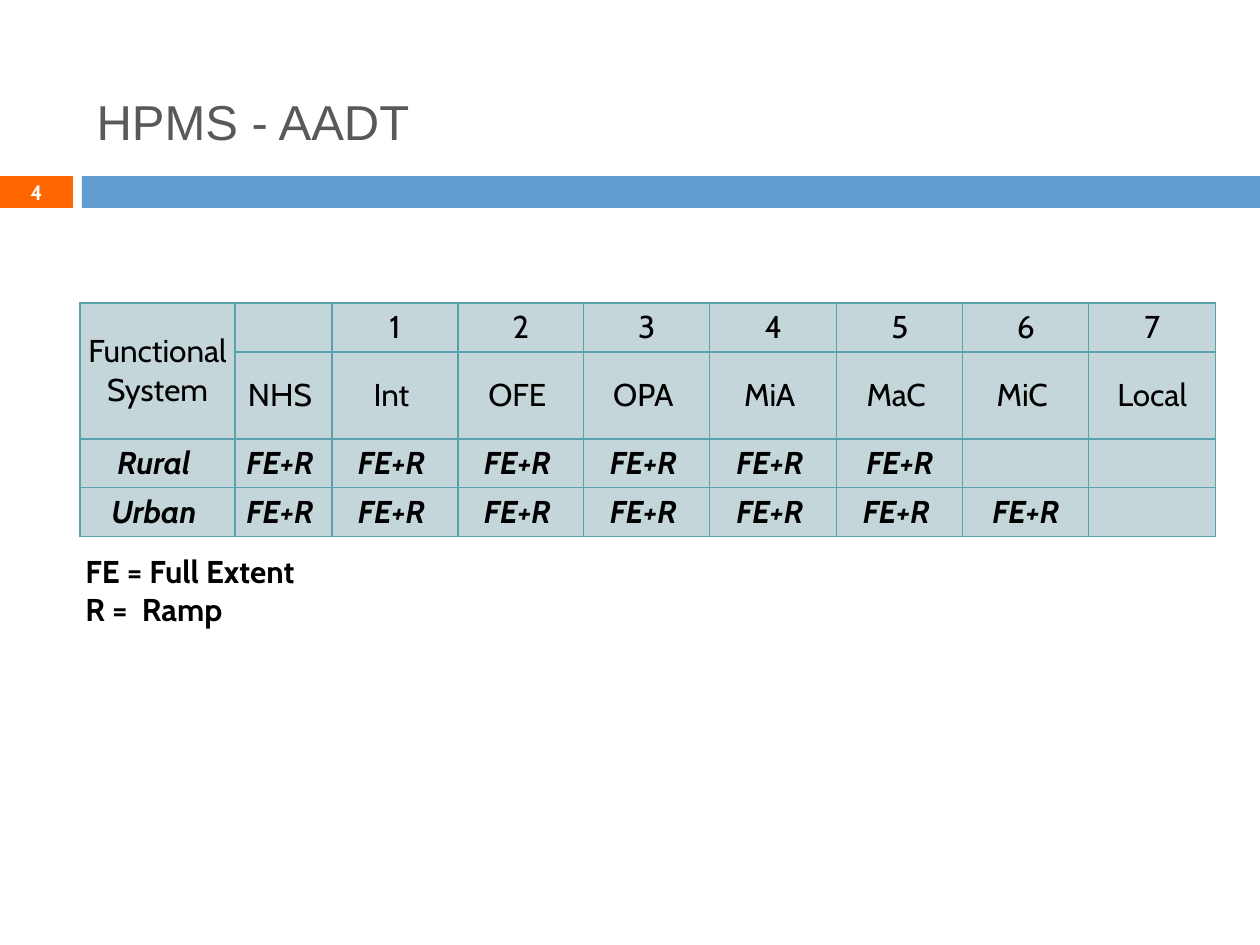
from dataclasses import dataclass

from lxml.etree import SubElement
from pptx import Presentation
from pptx.dml.color import RGBColor
from pptx.enum.shapes import MSO_SHAPE as Preset
from pptx.enum.text import MSO_ANCHOR as Anchor, PP_ALIGN as Align
from pptx.oxml.ns import qn
from pptx.util import Emu, Pt

SCALE = 914400 // 126
BORDER_SIDES = ("a:lnL", "a:lnR", "a:lnT", "a:lnB")
COLUMN_WIDTHS = [155, 97] + [126] * 3 + [127] + [126] * 2 + [127]
ROW_HEIGHTS = [49, 87, 49, 49]
FULL = "FE+R "
ROWS = [
    ["Functional System", "", *"1234567"],
    ["", "NHS ", "Int ", "OFE ", "OPA ", "MiA ", "MaC ", "MiC ", "Local"],
    ["Rural ", *[FULL] * 5, "FE+R", "", ""],
    ["Urban ", *[FULL] * 6, "FE+R", ""],
]


@dataclass
class Box:
    left: int
    top: int
    width: int
    height: int

    def emu(self) -> tuple:
        return px(self.left), px(self.top), px(self.width), px(self.height)


@dataclass
class Style:
    size: float = 18
    color: str = "000000"
    font: str = "Cabin"
    bold: bool = False
    italic: bool = False


def px(length: int) -> Emu:
    return Emu(length * SCALE)


def rgb(color: str) -> RGBColor:
    return RGBColor.from_string(color)


def add_run(paragraph, text: str, style: Style, align=Align.LEFT) -> None:
    paragraph.alignment = align
    run = paragraph.add_run()
    run.text = text
    run.font.name = style.font
    run.font.size = Pt(style.size)
    run.font.bold = style.bold
    run.font.italic = style.italic
    run.font.color.rgb = rgb(style.color)


def add_bar(slide, box: Box, color: str):
    shape = slide.shapes.add_shape(Preset.RECTANGLE, *box.emu())
    shape.shadow.inherit = False
    shape.fill.solid()
    shape.fill.fore_color.rgb = rgb(color)
    shape.line.fill.background()
    return shape


def add_text(slide, box: Box, lines: list, style: Style, align=Align.LEFT, anchor=Anchor.TOP) -> None:
    frame = slide.shapes.add_textbox(*box.emu()).text_frame
    frame.word_wrap = True
    frame.vertical_anchor = anchor
    for index, line in enumerate(lines):
        paragraph = frame.add_paragraph() if index else frame.paragraphs[0]
        add_run(paragraph, line, style, align)


def add_borders(cell, color: str, width: float) -> None:
    properties = cell._tc.get_or_add_tcPr()
    for position, side in enumerate(BORDER_SIDES):
        line = properties.makeelement(qn(side), {"w": str(Pt(width))})
        fill = SubElement(line, qn("a:solidFill"))
        SubElement(fill, qn("a:srgbClr")).set("val", color)
        properties.insert(position, line)


def format_cell(cell, text: str, style: Style) -> None:
    cell.margin_left = cell.margin_right = px(5)
    cell.margin_top = cell.margin_bottom = px(5)
    cell.vertical_anchor = Anchor.MIDDLE
    cell.fill.solid()
    cell.fill.fore_color.rgb = rgb("C4D6D9")
    add_borders(cell, "5AA2AE", 0.79)
    if text:
        add_run(cell.text_frame.paragraphs[0], text, style, Align.CENTER)


def add_extent_table(slide) -> None:
    box = Box(80, 303, sum(COLUMN_WIDTHS), sum(ROW_HEIGHTS))
    table = slide.shapes.add_table(len(ROWS), len(COLUMN_WIDTHS), *box.emu()).table
    table.first_row = table.horz_banding = False
    for column, width in zip(table.columns, COLUMN_WIDTHS):
        column.width = px(width)
    for row, height in zip(table.rows, ROW_HEIGHTS):
        row.height = px(height)
    for row_index, texts in enumerate(ROWS):
        emphasis = row_index >= 2
        style = Style(bold=emphasis, italic=emphasis)
        for column_index, text in enumerate(texts):
            format_cell(table.cell(row_index, column_index), text, style)
    table.cell(0, 0).merge(table.cell(1, 0))


def main() -> None:
    presentation = Presentation()
    presentation.slide_width, presentation.slide_height = px(1260), px(945)
    slide = presentation.slides.add_slide(presentation.slide_layouts[5])

    title = slide.shapes.title
    title.left, title.top, title.width, title.height = Box(84, 63, 1124, 116).emu()
    title.text_frame.vertical_anchor = Anchor.MIDDLE
    add_run(title.text_frame.paragraphs[0], "HPMS - AADT", Style(28, "595959", "Arial"))

    add_bar(slide, Box(0, 176, 73, 32), "FF6600")
    add_bar(slide, Box(82, 176, 1178, 32), "629DD1")
    add_text(slide, Box(0, 175, 73, 34), ["4"], Style(11.9, "FFFFFF", bold=True), Align.CENTER, Anchor.MIDDLE)
    add_extent_table(slide)
    add_text(slide, Box(73, 546, 494, 89), ["FE = Full Extent", "R =  Ramp"], Style(bold=True))
    presentation.save("out.pptx")


if __name__ == "__main__":
    main()
